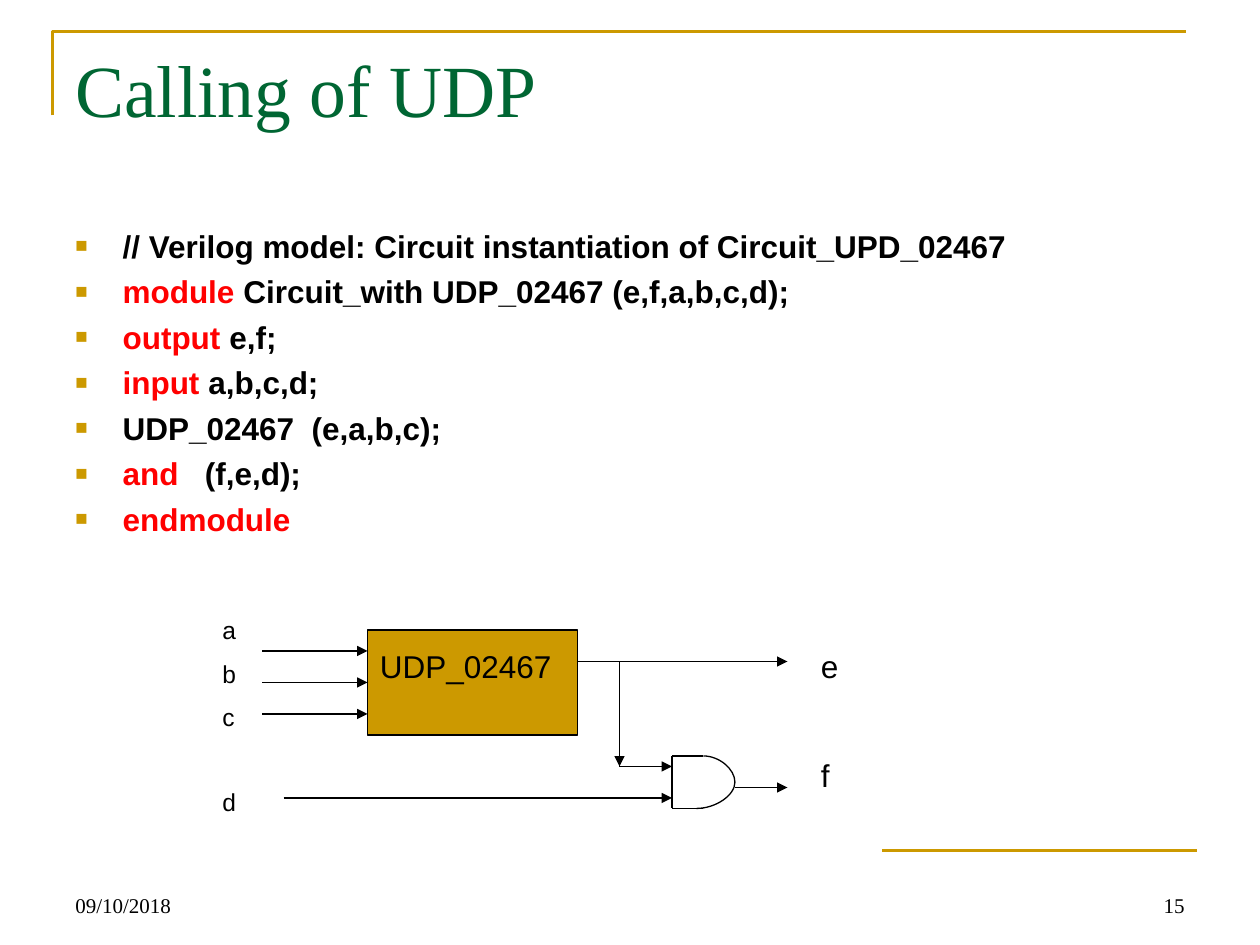
"""Build a slide on calling a user-defined primitive, with its circuit."""
from lxml.etree import SubElement as Sub
from pptx import Presentation
from pptx.dml.color import RGBColor
from pptx.enum.shapes import MSO_CONNECTOR as Conn, MSO_SHAPE as Shape
from pptx.enum.text import MSO_ANCHOR as Anchor, PP_ALIGN as Align
from pptx.oxml.ns import qn
from pptx.util import Pt

GOLD = RGBColor(0xCC, 0x99, 0x00)
GREEN = RGBColor(0x00, 0x66, 0x33)
RED = RGBColor(0xFF, 0x00, 0x00)
BLACK = RGBColor(0x00, 0x00, 0x00)
SERIF, SANS = "Times New Roman", "Arial"

CODE = [
    [("// Verilog model: Circuit instantiation of Circuit_UPD_02467", BLACK)],
    [("module ", RED), ("Circuit_with UDP_02467 (e,f,a,b,c,d);", BLACK)],
    [("output ", RED), ("e,f;", BLACK)],
    [("input ", RED), ("a,b,c,d;", BLACK)],
    [("UDP_02467  (e,a,b,c);", BLACK)],
    [("and", RED), ("   (f,e,d);", BLACK)],
    [("endmodule", RED)],
]
INPUTS = ["a", "b", "c", "d"]
OUTPUTS = ["e", "f"]
BOX = (210, 360, 120, 60)
GATE = (384, 432, 402, 462)
WIRES = [(150, y, 210, y) for y in (372, 390, 408)] + [
    (330, 378, 450, 378),
    (354, 378, 354, 438),
    (354, 438, 384, 438),
    (162, 456, 384, 456),
    (420, 450, 450, 450),
]

deck = Presentation()
deck.slide_width, deck.slide_height = Pt(720), Pt(540)
slide = deck.slides.add_slide(deck.slide_layouts[6])
shapes = slide.shapes


def add_text(lines, at, size=18, font=SANS, color=BLACK, bold=False,
             align=Align.LEFT, anchor=Anchor.TOP, gaps=(), bullet=False):
    frame = shapes.add_textbox(*map(Pt, at)).text_frame
    frame.word_wrap = True
    frame.vertical_anchor = anchor
    for i, line in enumerate(lines):
        para = frame.paragraphs[0] if i == 0 else frame.add_paragraph()
        para.alignment = align
        para.space_before = Pt(gaps[i] if gaps else 0)
        for text, tint in [(line, color)] if isinstance(line, str) else line:
            run = para.add_run()
            run.text = text
            run.font.name, run.font.size = font, Pt(size)
            run.font.bold, run.font.color.rgb = bold, tint
        if bullet:
            add_bullet(para)


def add_bullet(para):
    props = para._p.get_or_add_pPr()
    props.set("marL", str(Pt(27)))
    props.set("indent", str(-Pt(27)))
    Sub(Sub(props, qn("a:buClr")), qn("a:srgbClr")).set("val", str(GOLD))
    Sub(props, qn("a:buSzPct")).set("val", "65000")
    Sub(props, qn("a:buFont")).set("typeface", SANS)
    Sub(props, qn("a:buChar")).set("char", "■")


def add_line(ends, color=BLACK, width=0.75, kind=Conn.STRAIGHT, arrow=False):
    line = shapes.add_connector(kind, *map(Pt, ends))
    line.line.color.rgb, line.line.width = color, Pt(width)
    if arrow:
        Sub(line.line._get_or_add_ln(), qn("a:tailEnd")).set("type", "triangle")
    Sub(line._element.spPr, qn("a:effectLst"))
    return line


def add_frame():
    path = shapes.build_freeform(Pt(30), Pt(66))
    path.add_line_segments([(Pt(30), Pt(18)), (Pt(678), Pt(18))], close=False)
    frame = path.convert_to_shape()
    frame.shadow.inherit = False
    frame.fill.background()
    frame.line.color.rgb, frame.line.width = GOLD, Pt(1.5)


def add_gate():
    left, top, right, low = GATE
    tip, bulge = right - 4, 18
    curve = add_line((right, top, tip, low), kind=Conn.CURVE)
    guide = Sub(curve._element.spPr.prstGeom.get_or_add_avLst(), qn("a:gd"))
    guide.set("name", "adj1")
    guide.set("fmla", f"val {round(bulge / (tip - right) * 100000)}")
    for ends in [(right, top, left, top), (right, low, left, low),
                 (left, top, left, low)]:
        add_line(ends)


add_frame()
add_line((504, 486, 684, 486), color=GOLD, width=1.5)
add_text(["09/10/2018"], (36, 492, 168, 36), size=12, font=SERIF,
         anchor=Anchor.BOTTOM)
add_text(["15"], (516, 492, 168, 36), size=12, font=SERIF,
         align=Align.RIGHT, anchor=Anchor.BOTTOM)
add_text(["Calling of UDP"], (36, 21.6, 648, 74), size=42, font=SERIF,
         color=GREEN)
add_text(CODE, (36, 126, 648, 356), bold=True, bullet=True,
         gaps=[0] + [4.4] * (len(CODE) - 1))

block = shapes.add_shape(Shape.RECTANGLE, *map(Pt, BOX))
block.shadow.inherit = False
block.fill.solid()
block.fill.fore_color.rgb = GOLD
block.line.color.rgb, block.line.width = BLACK, Pt(0.75)
add_gate()
for wire in WIRES:
    add_line(wire, arrow=True)

add_text(["UDP_02467"], (210, 366, 114, 29))
add_text(INPUTS, (120, 348, 36, 125), size=14, gaps=[0, 8, 8, 32])
add_text(OUTPUTS, (462, 366, 36, 94), gaps=[0, 40.6])
deck.save("out.pptx")
